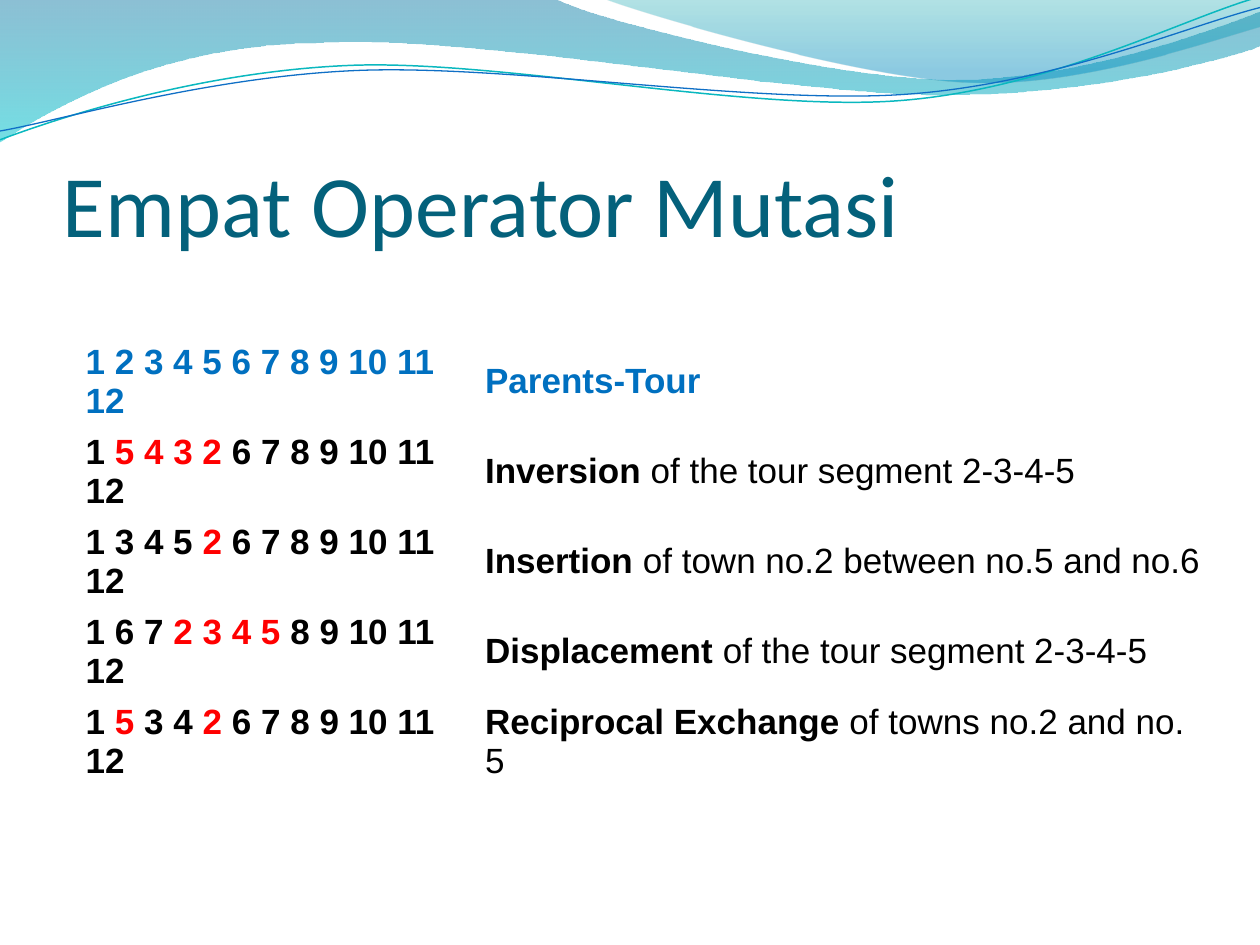
from pptx import Presentation
from pptx.dml.color import RGBColor
from pptx.enum.text import MSO_ANCHOR
from pptx.oxml.ns import qn
from pptx.util import Cm, Pt
from lxml import etree

MIDDLE = MSO_ANCHOR.MIDDLE
BOTTOM = MSO_ANCHOR.BOTTOM
BLUE, RED, BLACK, WHITE = "0070C0", "FF0000", "000000", "FFFFFF"
UNITS = 1000

BANDS = [
    ([(0, -0.01), (4.4, -0.01),
      (4.76, 0.17, 6.64, 0.63, 7.58, 0.63),
      (8.53, 0.63, 9.58, 0.26, 10, 0.09),
      (10.01, 0.36),
      (9.83, 0.44, 8.7, 0.76, 7.46, 0.75),
      (6.22, 0.75, 3.82, 0.28, 2.57, 0.34),
      (1.29, 0.35, 0.46, 0.83, -0.01, 1.13),
      (0, -0.01)],
     [(0, "0074A1", 45), (1, "00C6CF", 55)]),
    ([(4.79, -0.01),
      (5.09, 0.11, 6.82, 0.62, 7.69, 0.65),
      (8.56, 0.69, 9.61, 0.32, 10, 0.21),
      (10, 0), (4.79, -0.01)],
     [(0, "00A1A9", 30), (0.8, "008BBF", 45)]),
]
LINES = [
    ([(0, 1.11),
      (0.48, 0.93, 1.58, 0.57, 2.77, 0.52),
      (3.95, 0.47, 5.93, 0.89, 7.13, 0.8),
      (8.33, 0.71, 9.38, 0.15, 9.98, -0.02)], "0AB8BF", 0.85),
    ([(0, 1.04),
      (0.47, 0.96, 1.64, 0.61, 2.83, 0.56),
      (4.03, 0.51, 5.97, 0.83, 7.17, 0.75),
      (8.36, 0.67, 9.41, 0.21, 10, 0.06)], "0F6FC6", 0.75),
]
ROWS = [
    ([("1 2 3 4 5 6 7 8 9 10 11 12", BLUE)], [("Parents-Tour", BLUE)]),
    ([("1 ", BLACK), ("5 4 3 2", RED), (" 6 7 8 9 10 11 12", BLACK)],
     [("Inversion ", BLACK), ("of the tour segment 2-3-4-5", BLACK, False)]),
    ([("1 3 4 5 ", BLACK), ("2", RED), (" 6 7 8 9 10 11 12", BLACK)],
     [("Insertion ", BLACK), ("of town no.2 between no.5 and no.6", BLACK, False)]),
    ([("1 6 7 ", BLACK), ("2 3 4 5", RED), (" 8 9 10 11 12", BLACK)],
     [("Displacement ", BLACK), ("of the tour segment 2-3-4-5", BLACK, False)]),
    ([("1 ", BLACK), ("5", RED), (" 3 4 ", BLACK), ("2 ", RED),
      ("6 7 8 9 10 11 12", BLACK)],
     [("Reciprocal Exchange", BLACK), (" of towns no.2 and no. 5", BLACK, False)]),
]


def inch(size):
    return Cm(2.54 * size)


def color(code):
    return RGBColor.from_string(code)


def apply(item, values):
    for name, value in values.items():
        setattr(item, name, value)


def add_run(para, text, code, **values):
    run = para.add_run()
    run.text = text
    apply(run.font, values)
    run.font.color.rgb = color(code)


def bend(shape, parts):
    legs = iter(list(shape.element.iter(qn("a:lnTo"))))
    for part in parts:
        group = [next(legs) for _ in range(len(part) // 2)]
        if len(group) == 1:
            continue
        curve = etree.Element(qn("a:cubicBezTo"))
        group[0].addprevious(curve)
        for leg in group:
            curve.append(leg[0])
            leg.getparent().remove(leg)


def add_curve(slide, left, top, parts, close):
    dots = [(part[i] * UNITS, part[i + 1] * UNITS)
            for part in parts for i in range(0, len(part), 2)]
    pen = slide.shapes.build_freeform(*dots[0], scale=inch(1) / UNITS)
    pen.add_line_segments(dots[1:], close=close)
    shape = pen.convert_to_shape(inch(left), inch(top))
    shape.shadow.inherit = False
    bend(shape, parts[1:])
    return shape


def add_waves(slide, left, top):
    for parts, stops in BANDS:
        band = add_curve(slide, left, top, parts, True)
        band.line.fill.background()
        band.fill.gradient()
        band.fill.gradient_angle = 270
        for stop, (place, code, _) in zip(band.fill.gradient_stops, stops):
            stop.position = place
            stop.color.rgb = color(code)
        tints = band.element.spPr.iter(qn("a:srgbClr"))
        for tint, (_, _, alpha) in zip(tints, stops):
            etree.SubElement(tint, qn("a:alpha"), val=str(alpha * 1000))
    for parts, code, width in LINES:
        curve = add_curve(slide, left, top, parts, False)
        curve.fill.background()
        curve.line.color.rgb = color(code)
        curve.line.width = Pt(width)


def add_title(slide, left, top, width, height):
    box = slide.shapes.add_textbox(*map(inch, (left, top, width, height)))
    frame = box.text_frame
    apply(frame, {"word_wrap": True, "vertical_anchor": BOTTOM,
                  "margin_left": 0, "margin_right": 0,
                  "margin_top": inch(0.05), "margin_bottom": 0})
    add_run(frame.paragraphs[0], "Empat Operator Mutasi", "04617B",
            name="Calibri", size=Pt(50))


def add_tours(slide, left, top, width, height):
    shape = slide.shapes.add_table(
        len(ROWS), 2, *map(inch, (left, top, width, height)))
    table = shape.table
    apply(table, {"first_row": False, "horz_banding": False})
    first = 3.17
    for column, size in zip(table.columns, (first, width - first)):
        column.width = inch(size)
    for row, texts in enumerate(ROWS):
        for col, runs in enumerate(texts):
            cell = table.cell(row, col)
            apply(cell, {"vertical_anchor": MIDDLE,
                         "margin_top": Cm(0.06), "margin_bottom": Cm(0.06)})
            cell.fill.solid()
            cell.fill.fore_color.rgb = color(WHITE)
            for text, code, *bold in runs:
                add_run(cell.text_frame.paragraphs[0], text, code,
                        name="Arial", size=Pt(20), bold=not bold)


def main():
    deck = Presentation()
    apply(deck, {"slide_width": inch(10), "slide_height": inch(7.5)})
    slide = deck.slides.add_slide(deck.slide_layouts[6])
    add_waves(slide, 0, 0)
    add_title(slide, 0.5, 0.77, 9, 1.25)
    add_tours(slide, 0.58, 2.67, 9.08, 3.08)
    deck.save("out.pptx")


if __name__ == "__main__":
    main()
